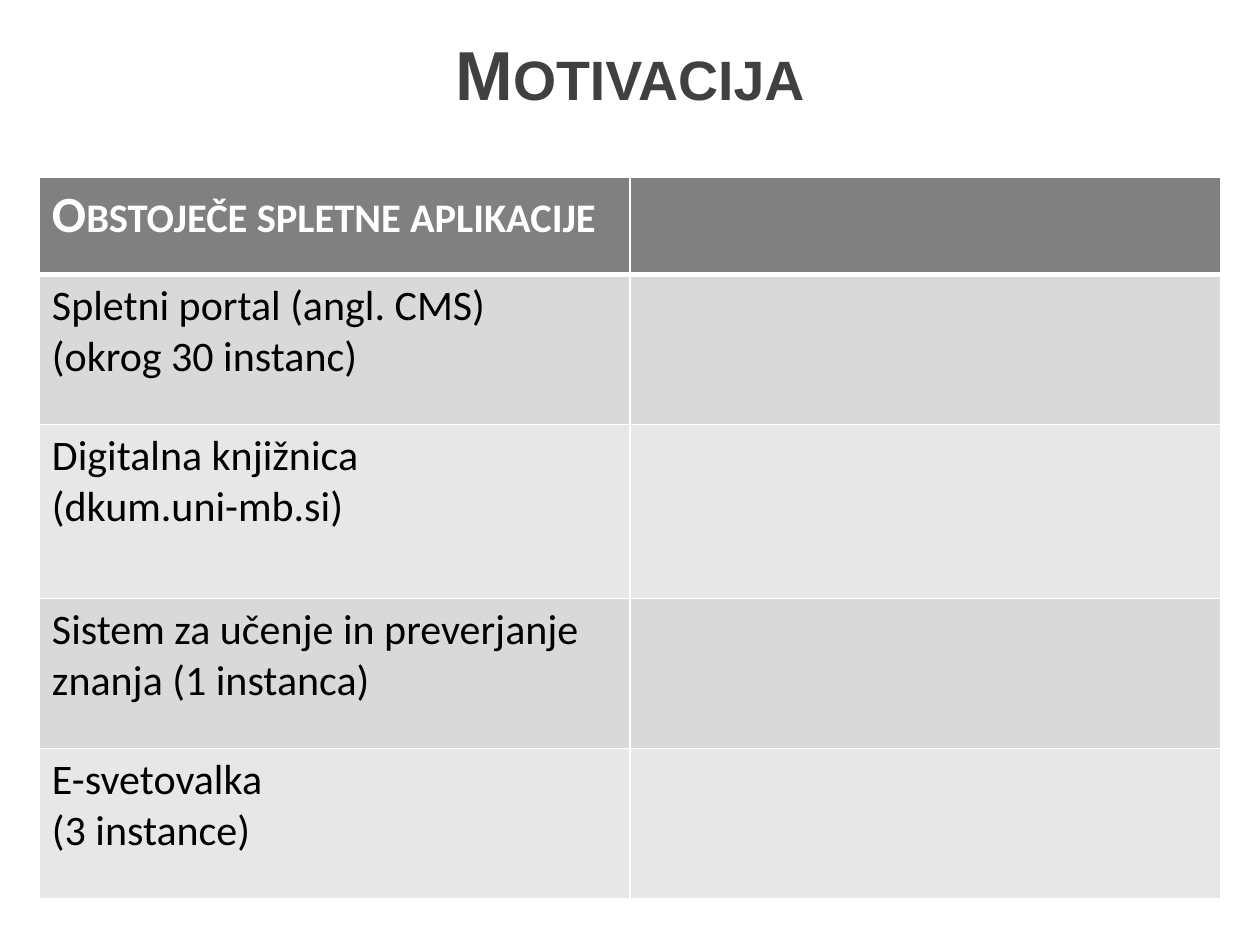
from lxml.etree import SubElement
from pptx import Presentation
from pptx.dml.color import RGBColor
from pptx.enum.text import MSO_ANCHOR, MSO_AUTO_SIZE, PP_ALIGN
from pptx.oxml.ns import qn
from pptx.util import Pt

COLORS = {"title": "404040", "header": "808080", "odd": "D9D9D9",
          "even": "E7E7E7", "white": "FFFFFF", "text": "000000"}

# Each entry is a list of paragraphs; "\n" is a line break
ROWS = [
    (55.4, ["Obstoječe spletne aplikacije"]),
    (85.7, ["Spletni portal (angl. CMS)\n(okrog 30 instanc)"]),
    (99.4, ["Digitalna knjižnica", "(dkum.uni-mb.si)"]),
    (85.7, ["Sistem za učenje in preverjanje znanja (1 instanca)"]),
    (85.7, ["E-svetovalka", "(3 instance)"]),
]


def add_run(p, text, font, size, color, heading=False):
    r = p.add_run()
    r.text = text
    r.font.name = font
    r.font.size = Pt(size)
    r.font.bold = heading
    r.font.color.rgb = RGBColor.from_string(COLORS[color])
    if heading:
        r._r.get_or_add_rPr().set("cap", "small")


def add_border(cell, side, width):
    ln = SubElement(cell._tc.get_or_add_tcPr(), qn(f"a:ln{side}"), w=str(Pt(width)))
    fill = SubElement(ln, qn("a:solidFill"))
    SubElement(fill, qn("a:srgbClr"), val=COLORS["white"])


prs = Presentation()
prs.slide_width, prs.slide_height = Pt(720), Pt(540)
s = prs.slides.add_slide(prs.slide_layouts[5])

# Title
title = s.shapes.title
title.left, title.top, title.width, title.height = Pt(0), Pt(16.5), Pt(720), Pt(50.4)
tf = title.text_frame
tf.auto_size = MSO_AUTO_SIZE.NONE
tf.vertical_anchor = MSO_ANCHOR.MIDDLE
p = tf.paragraphs[0]
p.alignment = PP_ALIGN.CENTER
add_run(p, "Motivacija", "Arial", 39.6, "title", heading=True)

# Table of web applications
table_height = sum(height for height, _ in ROWS)
table = s.shapes.add_table(len(ROWS), 2, Pt(22.5), Pt(101.5),
                           Pt(675), Pt(table_height)).table
for col in table.columns:
    col.width = Pt(337.5)

for i, (height, paragraphs) in enumerate(ROWS):
    table.rows[i].height = Pt(height)
    header = i == 0
    fill = "header" if header else "odd" if i % 2 else "even"

    # Borders and fill, with a thick rule under the header
    for cell in table.rows[i].cells:
        add_border(cell, "L", 1)
        add_border(cell, "R", 1)
        add_border(cell, "T", 3 if i == 1 else 1)
        add_border(cell, "B", 3 if header else 1)
        cell.fill.solid()
        cell.fill.fore_color.rgb = RGBColor.from_string(COLORS[fill])

    # Application name in the first column
    tf = table.cell(i, 0).text_frame
    for j, text in enumerate(paragraphs):
        p = tf.add_paragraph() if j else tf.paragraphs[0]
        for k, line in enumerate(text.split("\n")):
            if k:
                p.add_line_break()
            add_run(p, line, "Calibri", 29 if header else 24,
                    "white" if header else "text", heading=header)

prs.save("out.pptx")
